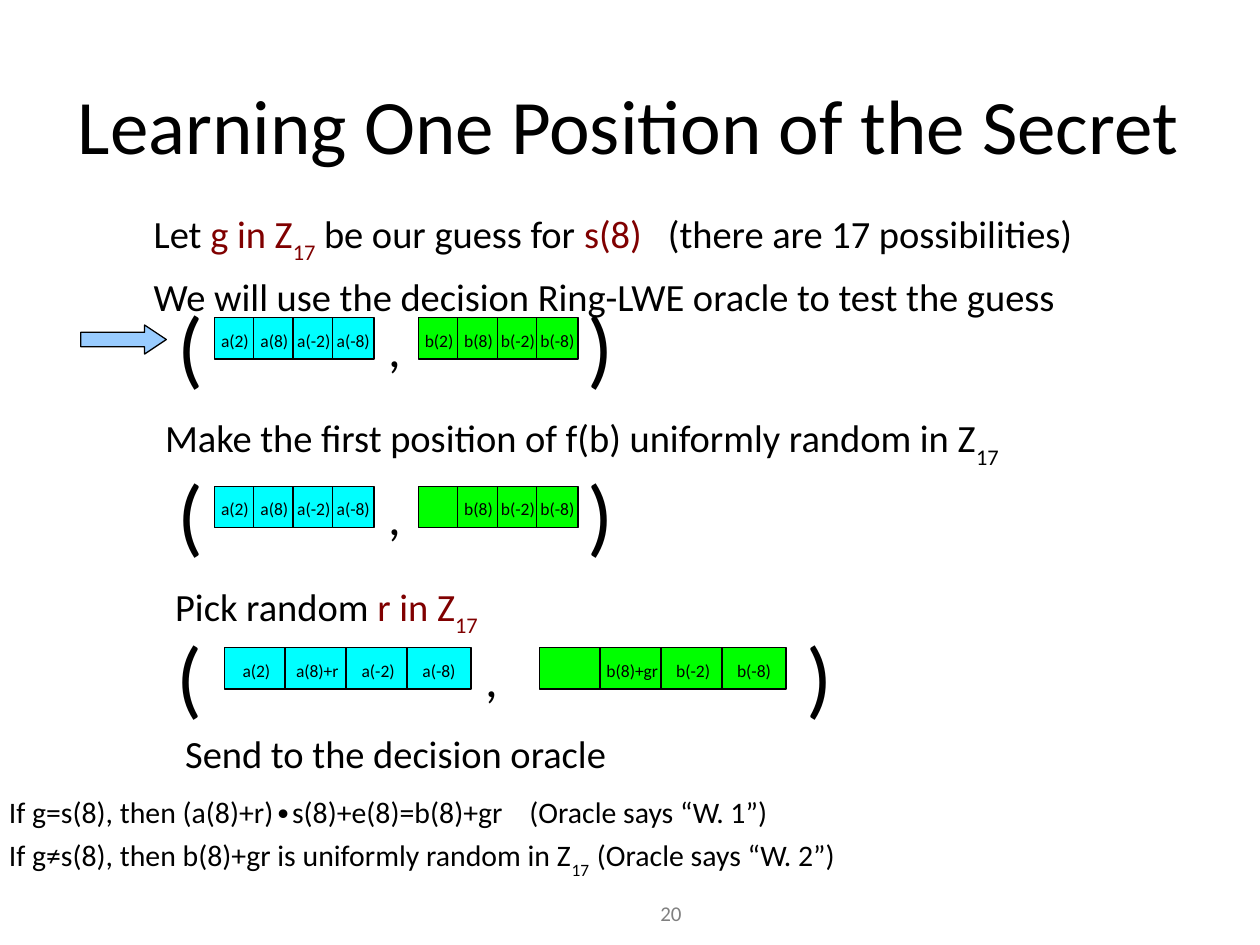
"""Build the slide on learning one position of the secret with a decision oracle."""
from pptx import Presentation
from pptx.dml.color import RGBColor
from pptx.enum.shapes import MSO_SHAPE as SHAPE
from pptx.enum.text import MSO_ANCHOR as ANCHOR, PP_ALIGN as ALIGN
from pptx.util import Inches, Pt

BLACK = RGBColor(0, 0, 0)
MAROON = RGBColor(0x80, 0, 0)
GRAY = RGBColor(0x80, 0x80, 0x80)
CYAN = RGBColor(0, 0xFF, 0xFF)
GREEN = RGBColor(0, 0xFF, 0)
BLUE = RGBColor(0x99, 0xCC, 0xFF)

prs = Presentation()
prs.slide_width, prs.slide_height = Inches(10), Inches(7.5)
s = prs.slides.add_slide(prs.slide_layouts[6])


def add_text(x, y, w, h, size, *lines, top=0.04, spacing=1.17, align=ALIGN.LEFT, color=BLACK):
    sp = s.shapes.add_textbox(Inches(x), Inches(y), Inches(w), Inches(h))
    tf = sp.text_frame
    tf.word_wrap = True
    tf.margin_left = tf.margin_right = Inches(0.09)
    tf.margin_top, tf.margin_bottom = Inches(top), Inches(0.04)
    for i, runs in enumerate(lines):
        p = tf.paragraphs[0] if i == 0 else tf.add_paragraph()
        p.alignment, p.line_spacing = align, spacing
        p.font.size, p.font.name = Pt(size), "Calibri"
        for text, run_color, is_sub in runs:
            r = p.add_run()
            r.text = text
            r.font.color.rgb = run_color or color
            if is_sub:
                r.font._element.set("baseline", "-33000")
    return tf


def add_box(kind, x, y, w, h, fill, text=""):
    sp = s.shapes.add_shape(kind, Inches(x), Inches(y), Inches(w), Inches(h))
    sp.shadow.inherit = False
    sp.fill.solid()
    sp.fill.fore_color.rgb = fill
    sp.line.color.rgb = BLACK
    sp.line.width = Pt(0.75)
    if text:
        tf = sp.text_frame
        tf.word_wrap = False
        tf.vertical_anchor = ANCHOR.MIDDLE
        tf.margin_left = tf.margin_right = Inches(0.09)
        tf.margin_top = tf.margin_bottom = Inches(0.04)
        p = tf.paragraphs[0]
        p.text = text
        p.alignment, p.line_spacing = ALIGN.CENTER, 1.17
        p.font.size, p.font.name, p.font.color.rgb = Pt(10), "Calibri", BLACK
    return sp


title = add_text(0.23, 0.34, 9.52, 1.16, 44,
                 [("Learning One Position of the Secret", None, False)], align=ALIGN.CENTER)
title.vertical_anchor = ANCHOR.MIDDLE

add_text(1.13, 1.55, 8.67, 0.77, 22,
         [("Let ", None, False), ("g in Z", MAROON, False), ("17", MAROON, True),
          (" be our guess for ", None, False), ("s(8)", MAROON, False),
          ("   (there are 17 possibilities)", None, False)],
         [("We will use the decision Ring-LWE oracle to test the guess", None, False)])
add_text(1.22, 3.17, 8.35, 0.45, 22,
         [("Make the first position of f(b) uniformly random in Z", None, False),
          ("17", None, True)])
add_text(1.3, 4.51, 3.51, 0.45, 22,
         [("Pick random ", None, False), ("r in Z", MAROON, False), ("17", MAROON, True)])
add_text(1.38, 5.69, 4.82, 0.41, 22, [("Send to the decision oracle", None, False)])
add_text(-0.02, 6.21, 8.64, 0.77, 17,
         [("If g=s(8), then (a(8)+r)∙s(8)+e(8)=b(8)+gr    (Oracle says “W. 1”)", None, False)],
         [("If g≠s(8), then b(8)+gr is uniformly random in Z", None, False),
          ("17  ", None, True), ("(Oracle says “W. 2”)", None, False)])

arrow = add_box(SHAPE.RIGHT_ARROW, 0.64, 2.58, 0.68, 0.23, BLUE)
arrow.adjustments[0], arrow.adjustments[1] = 0.5, 0.75

a_cells = ["a(2)", "a(8)", "a(-2)", "a(-8)"]
b_cells = ["b(2)", "b(8)", "b(-2)", "b(-8)"]
narrow = (0.33, 0.313, 1.7, 3.32, 1.32, 4.57, 0.45, 2.99, 0.33)
wide = (0.51, 0.483, 1.78, 4.28, 1.31, 6.31, 0.7, 3.76, 0.51)
pairs = [
    (2.52, narrow, a_cells, b_cells),
    (3.86, narrow, a_cells, [""] + b_cells[1:]),
    (5.14, wide, ["a(2)", "a(8)+r"] + a_cells[2:], ["", "b(8)+gr"] + b_cells[2:]),
]
for y, layout, a_row, b_row in pairs:
    cell_w, pitch, a_x, b_x, open_x, close_x, paren_w, comma_x, comma_w = layout
    for x, fill, row in ((a_x, CYAN, a_row), (b_x, GREEN, b_row)):
        for i, text in enumerate(row):
            add_box(SHAPE.RECTANGLE, x + i * pitch, y, cell_w, 0.33, fill, text)
    for x, mark in ((open_x, "("), (close_x, ")")):
        add_text(x, y - 0.29, paren_w, 0.85, 49, [(mark, None, False)], top=0.09, spacing=1.0)
    add_text(comma_x, y - 0.08, comma_w, 0.79, 29, [(",", None, False)], top=0.07, spacing=1.0)

add_text(4.71, 7.1, 1.23, 0.4, 12, [("20", None, False)],
         top=0.05, spacing=1.0, align=ALIGN.CENTER, color=GRAY)

prs.save("out.pptx")
